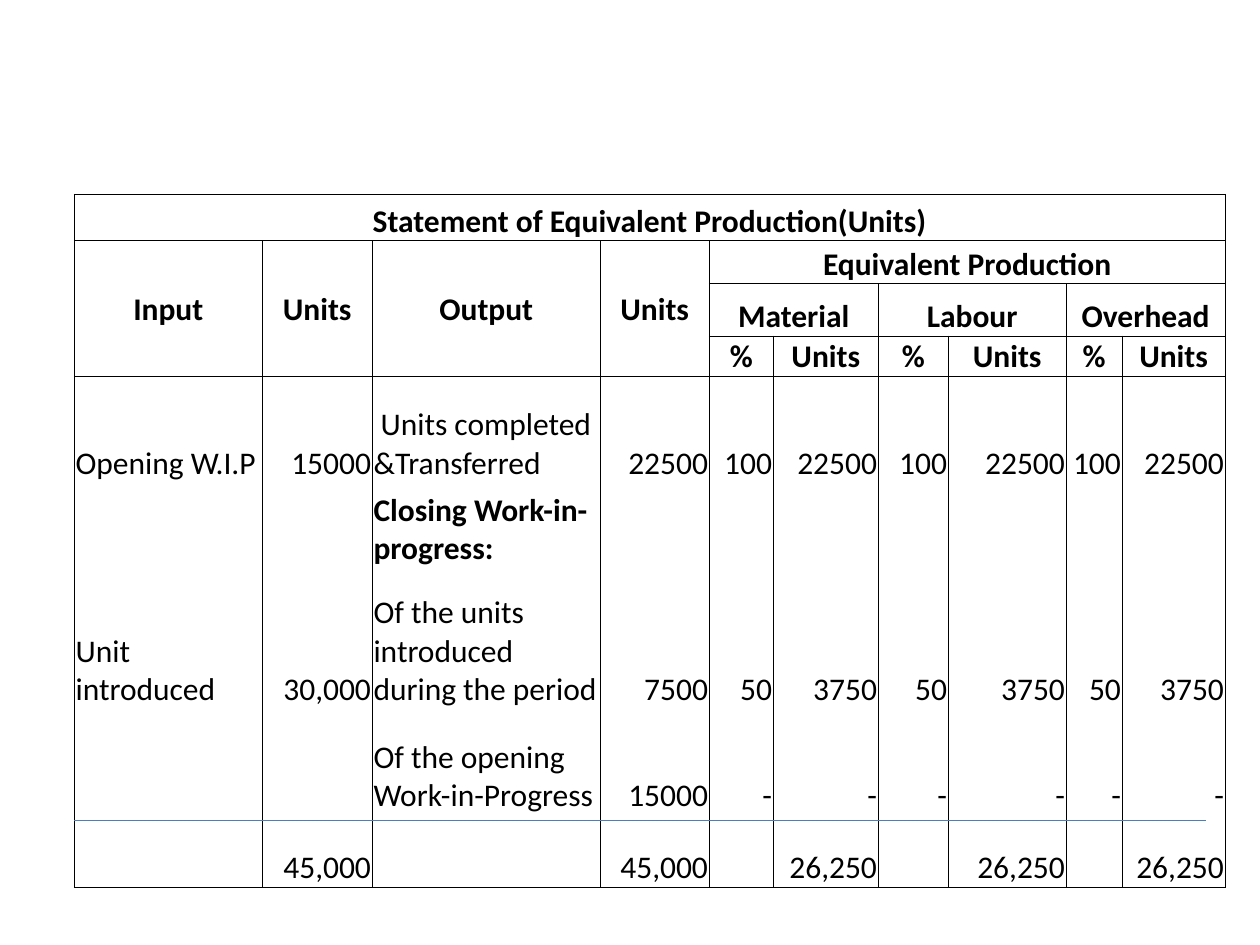
from lxml.etree import SubElement
from pptx import Presentation
from pptx.dml.color import RGBColor
from pptx.enum.shapes import MSO_CONNECTOR
from pptx.enum.text import MSO_ANCHOR, PP_ALIGN
from pptx.oxml import parse_xml
from pptx.oxml.ns import nsdecls, qn
from pptx.util import Pt

# Content: None marks a cell covered by a merge, "" an empty cell
ROWS = [
    ["Statement of Equivalent Production(Units)"] + [None] * 9,
    ["Input", "Units", "Output", "Units", "Equivalent Production"] + [None] * 5,
    [None] * 4 + ["Material", None, "Labour", None, "Overhead", None],
    [None] * 4 + ["%", "Units"] * 3,
    ["Opening W.I.P", "15000", " Units completed &Transferred", "22500"] + ["100", "22500"] * 3,
    ["Unit introduced", "30,000", "Closing Work-in- progress:", "7500"] + ["50", "3750"] * 3,
    [None, None, "Of the units introduced during the period"] + [None] * 7,
    ["", "", "Of the opening Work-in-Progress", "15000"] + ["-"] * 6,
    ["", "45,000", "", "45,000"] + ["", "26,250"] * 3,
]
HEADER_ROWS = 4
LABEL_COLUMNS = (0, 2)
BOLD_BODY_CELL = (5, 2)

# Merges: (top row, left column, bottom row, right column)
MERGES = [(0, 0, 0, 9), (1, 4, 1, 9)]
MERGES += [(1, column, 3, column) for column in range(4)]
MERGES += [(2, column, 2, column + 1) for column in (4, 6, 8)]
MERGES += [(5, column, 6, column) for column in range(10) if column != 2]

# Layout, in points
LEFT, TOP = 42.5, 111
COLUMN_WIDTHS = [107.4, 62.9, 130.3, 62.3, 36.6, 60, 40, 67.4, 32, 58.9]
ROW_HEIGHTS = [26.6, 24.5, 30, 23.2, 60.5, 49, 80.6, 60.5, 41]
RULE_Y, RULE_RIGHT = 468.7, 689

THEME = {
    "font": "Calibri", "size": 18, "text": "000000",
    "border": "000000", "border_width": 0.5,
    "rule": "4B7EBC", "rule_width": 0.75,
}
CELL_FORMAT = {
    "margin_left": Pt(0.72), "margin_right": Pt(0.72),
    "margin_top": Pt(0.72), "margin_bottom": Pt(0),
}


def set_borders(cell, sides):
    """Draw the named sides (L, R, T, B) and clear the others."""
    properties = cell._tc.get_or_add_tcPr()
    for index, side in enumerate("LRTB"):
        line = parse_xml(f'<a:ln{side} {nsdecls("a")}/>')
        if side in sides:
            line.set("w", str(Pt(THEME["border_width"])))
            fill = SubElement(line, qn("a:solidFill"))
            SubElement(fill, qn("a:srgbClr")).set("val", THEME["border"])
        else:
            SubElement(line, qn("a:noFill"))
        properties.insert(index, line)


def border_sides(row):
    if row < HEADER_ROWS:
        return "LRTB"
    return "LR" + ("T" if row == HEADER_ROWS else "") + ("B" if row == len(ROWS) - 1 else "")


def write_text(cell, text, row, column):
    header = row < HEADER_ROWS
    paragraph = cell.text_frame.paragraphs[0]
    if header:
        paragraph.alignment = PP_ALIGN.CENTER
    else:
        paragraph.alignment = PP_ALIGN.LEFT if column in LABEL_COLUMNS else PP_ALIGN.RIGHT
    run = paragraph.add_run()
    run.text = text
    font_format = {
        "name": THEME["font"], "size": Pt(THEME["size"]),
        "bold": header or (row, column) == BOLD_BODY_CELL,
    }
    for name, value in font_format.items():
        setattr(run.font, name, value)
    run.font.color.rgb = RGBColor.from_string(THEME["text"])
    # Column headings and percent/unit headings sit mid-cell, the rest at the bottom
    centred = row == 3 or (row == 1 and column < 4)
    cell.vertical_anchor = MSO_ANCHOR.MIDDLE if centred else MSO_ANCHOR.BOTTOM


def add_statement(slide):
    table = slide.shapes.add_table(
        len(ROWS), len(COLUMN_WIDTHS), Pt(LEFT), Pt(TOP),
        Pt(sum(COLUMN_WIDTHS)), Pt(sum(ROW_HEIGHTS))).table
    table.first_row = table.horz_banding = False
    for column, width in zip(table.columns, COLUMN_WIDTHS):
        column.width = Pt(width)
    for row, height in zip(table.rows, ROW_HEIGHTS):
        row.height = Pt(height)
    for top, left, bottom, right in MERGES:
        table.cell(top, left).merge(table.cell(bottom, right))
    for row, texts in enumerate(ROWS):
        for column, text in enumerate(texts):
            cell = table.cell(row, column)
            for name, value in CELL_FORMAT.items():
                setattr(cell, name, value)
            set_borders(cell, border_sides(row))
            cell.fill.background()
            if text:
                write_text(cell, text, row, column)


def add_total_rule(slide):
    rule = slide.shapes.add_connector(
        MSO_CONNECTOR.STRAIGHT, Pt(LEFT), Pt(RULE_Y), Pt(RULE_RIGHT), Pt(RULE_Y))
    rule.line.color.rgb = RGBColor.from_string(THEME["rule"])
    rule.line.width = Pt(THEME["rule_width"])
    SubElement(rule._element.spPr, qn("a:effectLst"))


def main():
    presentation = Presentation()
    presentation.slide_width, presentation.slide_height = Pt(720), Pt(540)
    slide = presentation.slides.add_slide(presentation.slide_layouts[6])
    add_statement(slide)
    add_total_rule(slide)
    presentation.save("out.pptx")


if __name__ == "__main__":
    main()
